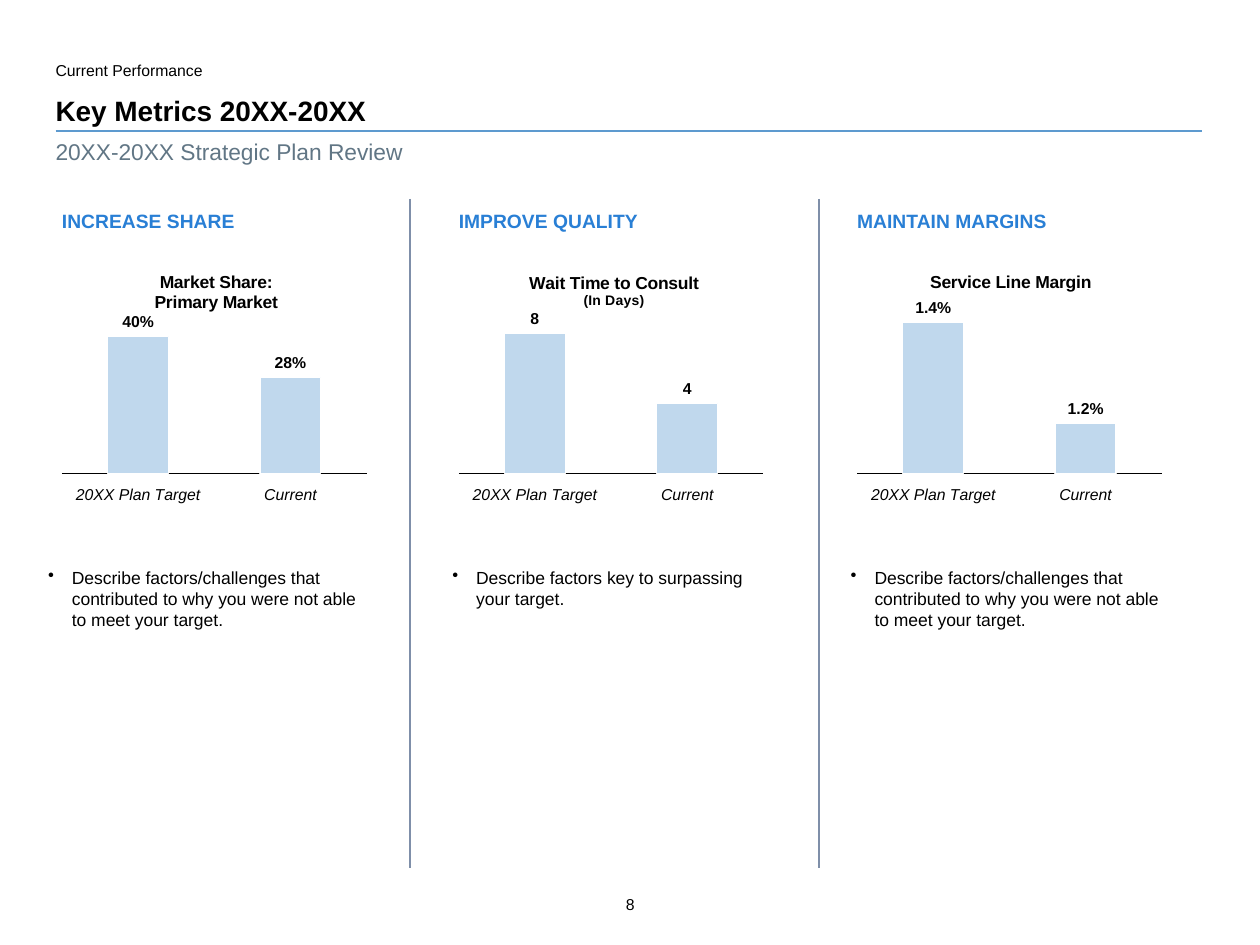
from dataclasses import dataclass

from lxml.etree import SubElement
from pptx import Presentation
from pptx.chart.data import CategoryChartData
from pptx.dml.color import RGBColor
from pptx.enum.chart import XL_CHART_TYPE as ChartType, XL_LABEL_POSITION as LabelPos
from pptx.enum.chart import XL_TICK_LABEL_POSITION as TickPos, XL_TICK_MARK as TickMark
from pptx.enum.shapes import MSO_CONNECTOR as Connector
from pptx.enum.text import MSO_ANCHOR as Anchor, MSO_AUTO_SIZE as AutoSize, PP_ALIGN as Align
from pptx.oxml import parse_xml
from pptx.oxml.ns import nsdecls, qn
from pptx.util import Cm, Pt


@dataclass(frozen=True)
class Theme:
    """Colours, font and type sizes of the slide."""
    font: str = "Arial"
    ink: str = "000000"
    paper: str = "FFFFFF"
    muted: str = "617685"
    accent: str = "297FD5"
    bar: str = "C0D8ED"
    rule: str = "5D9ACF"
    divider: str = "7F8FA9"
    title: int = 16
    subtitle: int = 13
    heading: int = 11
    body: int = 10
    small: int = 9
    note: int = 8


@dataclass(frozen=True)
class Metric:
    """One column: heading, chart and comment."""
    left: float
    heading: str
    title: tuple
    title_x: float
    series: str
    values: tuple
    number_format: str
    scale: tuple
    comment: str
    comment_left: float


class MetricSlide:
    """Draws themed elements on one slide."""

    def __init__(self, slide, theme):
        self.slide, self.theme = slide, theme

    def style(self, font, size, color=None, bold=False, italic=False):
        """Apply the theme font with the given size and colour."""
        font.name, font.size, font.bold, font.italic = self.theme.font, Pt(size), bold, italic
        font.color.rgb = RGBColor.from_string(color or self.theme.ink)

    def fill_frame(self, frame, wording, size, inset, color=None, bold=False, align=Align.LEFT):
        """Write one paragraph and return it."""
        frame.word_wrap, frame.auto_size = True, AutoSize.NONE
        frame.margin_left = frame.margin_right = Cm(inset[0])
        frame.margin_top = frame.margin_bottom = Cm(inset[1])
        paragraph = frame.paragraphs[0]
        paragraph.text, paragraph.alignment = wording, align
        self.style(paragraph.font, size, color, bold)
        return paragraph

    def title(self, wording, left, top, width, height):
        """Place and format the title placeholder."""
        title = self.slide.shapes.title
        title.left, title.top, title.width, title.height = map(Cm, (left, top, width, height))
        self.fill_frame(title.text_frame, wording, self.theme.title, (0, 0), bold=True)
        title.text_frame.vertical_anchor = Anchor.BOTTOM

    def text(self, wording, box, size, inset=(0, 0.1), **look):
        """Add a text box and return its paragraph."""
        frame = self.slide.shapes.add_textbox(*map(Cm, box)).text_frame
        return self.fill_frame(frame, wording, size, inset, **look)

    def bullet(self, wording, box):
        """Add a text box with a hanging bullet."""
        paragraph = self.text(wording, box, self.theme.body, (0.13, 0.13))
        properties = paragraph._p.get_or_add_pPr()
        properties.set("marL", str(Cm(0.48)))
        properties.set("indent", str(-Cm(0.48)))
        bullet = SubElement(properties, qn("a:buChar"))
        bullet.set("char", "•")
        properties.remove(bullet)
        properties.insert(0, bullet)

    def line(self, start, end, color, width):
        """Add a straight line without shadow."""
        line = self.slide.shapes.add_connector(Connector.STRAIGHT, *map(Cm, start + end))
        line.line.color.rgb, line.line.width = RGBColor.from_string(color), Pt(width)
        SubElement(line._element.spPr, qn("a:effectLst"))

    def layout(self, **places):
        """Return a manual chart layout for the given fractions."""
        target = '<c:layoutTarget val="inner"/>' if "w" in places else ""
        modes = "".join(f'<c:{key}Mode val="edge"/>' for key in "xy")
        sizes = "".join(f'<c:{key} val="{value}"/>' for key, value in places.items())
        return parse_xml(f'<c:layout {nsdecls("c")}><c:manualLayout>{target}{modes}{sizes}'
                         '</c:manualLayout></c:layout>')

    def chart_title(self, chart, lines, x):
        """Write the chart title, one paragraph for each line."""
        frame = chart.chart_title.text_frame
        for index, (wording, size) in enumerate(lines):
            paragraph = frame.add_paragraph() if index else frame.paragraphs[0]
            paragraph.text = wording
            self.style(paragraph.font, size, bold=True)
        title = chart.chart_title._element
        for old in title.findall(qn("c:layout")):
            title.remove(old)
        title.find(qn("c:tx")).addnext(self.layout(x=x, y=0.06))
        chart.chart_title.include_in_layout = False

    def chart(self, metric, box):
        """Add a column chart of target and current value."""
        theme = self.theme
        data = CategoryChartData(number_format=metric.number_format)
        data.categories = ["20XX Plan Target", "Current"]
        data.add_series(metric.series, metric.values)
        chart = self.slide.shapes.add_chart(ChartType.COLUMN_CLUSTERED, *map(Cm, box), data).chart
        self.style(chart.font, theme.small)
        chart.has_legend = False
        self.chart_title(chart, metric.title, metric.title_x)

        values = chart.value_axis
        values.minimum_scale, values.maximum_scale = metric.scale
        values.has_major_gridlines = values.visible = False
        categories = chart.category_axis
        categories.major_tick_mark = categories.minor_tick_mark = TickMark.NONE
        categories.tick_label_position = TickPos.LOW
        self.style(categories.tick_labels.font, theme.small, italic=True)
        categories.format.line.color.rgb = RGBColor.from_string(theme.ink)
        categories.format.line.width = Pt(0.75)

        plot = chart.plots[0]
        plot.gap_width, plot.overlap, plot.vary_by_categories = 150, -25, False
        plot.has_data_labels = True
        labels = plot.data_labels
        labels.show_value, labels.position = True, LabelPos.OUTSIDE_END
        labels.number_format, labels.number_format_is_linked = metric.number_format, False
        self.style(labels.font, theme.small, bold=True)
        bars = plot.series[0].format
        bars.fill.solid()
        bars.fill.fore_color.rgb = RGBColor.from_string(theme.bar)
        bars.line.color.rgb, bars.line.width = RGBColor.from_string(theme.paper), Pt(0.75)

        area = chart._chartSpace.chart.plotArea
        for old in area.findall(qn("c:layout")):
            area.remove(old)
        area.insert(0, self.layout(x=0.02, y=0.2, w=0.96, h=0.685))


def main():
    """Build and save the key metrics slide."""
    theme = Theme()
    deck = Presentation()
    deck.slide_width, deck.slide_height = Cm(25.4), Cm(19.05)
    page = MetricSlide(deck.slides.add_slide(deck.slide_layouts[5]), theme)

    left, width = 1.12, 23.1
    page.line((left, 2.64), (24.23, 2.64), theme.rule, 0.75)
    page.text("8", (11.84, 17.93, 1.73, 0.66), theme.small, (0.1, 0.1), align=Align.CENTER)
    page.text("Current Performance", (left, 1.12, 7.34, 0.51), theme.small)
    page.title("Key Metrics 20XX-20XX", left, 1.88, width, 0.69)
    page.text("20XX-20XX Strategic Plan Review", (left, 2.67, width, 0.76),
              theme.subtitle, color=theme.muted)

    missed = ("Describe factors/challenges that contributed to why you were not able "
              "to meet your target.")
    metrics = (
        Metric(1.12, "INCREASE SHARE",
               (("Market Share:", theme.body), ("Primary Market", theme.body)), 0.3,
               "Market Share: Primary Market", (0.4, 0.28), "0%", (0, 0.5), missed, 0.84),
        Metric(9.12, "IMPROVE QUALITY",
               (("Wait Time to Consult", theme.body), ("(In Days)", theme.note)), 0.23,
               "Series 1", (8, 4), "General", (0, 9.8),
               "Describe factors key to surpassing your target.", 8.99),
        Metric(17.15, "MAINTAIN MARGINS", (("Service Line Margin", theme.body),), 0.24,
               "Service Line Margin", (0.014, 0.012), "0.0%", (0.011, 0.0144), missed, 17.02),
    )
    for metric in metrics:
        page.chart(metric, (metric.left, 5.08, 6.4, 5.08))
        page.text(metric.heading, (metric.left, 4.09, 6.4, 0.74), theme.heading,
                  (0.13, 0.13), color=theme.accent, bold=True)
        page.bullet(metric.comment, (metric.comment_left, 11.3, 6.65, 1.55))
    for divider in (8.26, 16.51):
        page.line((divider, 4.01), (divider, 17.5), theme.divider, 1)

    deck.save("out.pptx")


if __name__ == "__main__":
    main()
